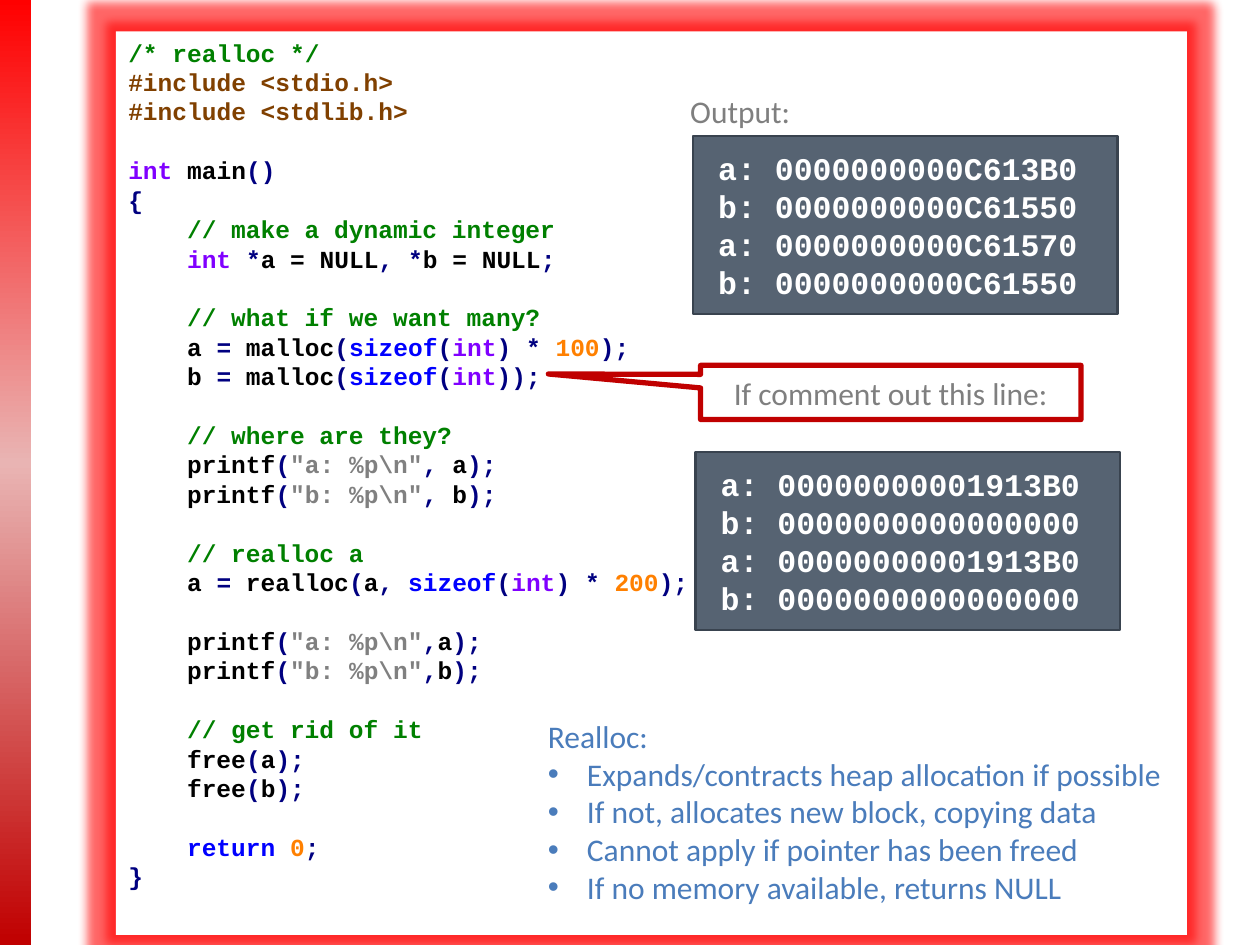
from copy import deepcopy
from itertools import groupby

from lxml import etree
from pptx import Presentation
from pptx.dml.color import RGBColor
from pptx.enum.shapes import MSO_SHAPE
from pptx.enum.text import MSO_ANCHOR, PP_ALIGN
from pptx.oxml.ns import qn
from pptx.util import Inches, Pt

RECT = MSO_SHAPE.RECTANGLE
CALLOUT = MSO_SHAPE.RECTANGULAR_CALLOUT
MIDDLE, TOP = MSO_ANCHOR.MIDDLE, MSO_ANCHOR.TOP
LEFT, CENTER = PP_ALIGN.LEFT, PP_ALIGN.CENTER

SANS, MONO = "Calibri", "Courier New"
COLORS = {
    "white": "FFFFFF", "gray": "7F7F7F", "blue": "4A7CBB", "red": "C00000",
    "slate": "4D5B6B", "edge": "39434F", "glow": "FF0000",
    "note": "008000", "macro": "804000", "type": "8000FF", "plain": "000000",
    "sign": "000080", "word": "0000FF", "digit": "FF8000", "quote": "808080",
}
BAR = [(0, "FF0000"), (0.49, "E9B4B3"), (1, "C00000")]

CODE = r"""/* realloc */
#include <stdio.h>
#include <stdlib.h>

int main()
{
    // make a dynamic integer
    int *a = NULL, *b = NULL;

    // what if we want many?
    a = malloc(sizeof(int) * 100);
    b = malloc(sizeof(int));

    // where are they?
    printf("a: %p\n", a);
    printf("b: %p\n", b);

    // realloc a
    a = realloc(a, sizeof(int) * 200);

    printf("a: %p\n",a);
    printf("b: %p\n",b);

    // get rid of it
    free(a);
    free(b);

    return 0;
}"""

OUTPUTS = [
    (5.5, 1.08, ["a: 0000000000C613B0", "b: 0000000000C61550",
                 "a: 0000000000C61570", "b: 0000000000C61550"]),
    (5.52, 3.59, ["a: 00000000001913B0", "b: 0000000000000000",
                  "a: 00000000001913B0", "b: 0000000000000000"]),
]
POINTS = [
    "Expands/contracts heap allocation if possible",
    "If not, allocates new block, copying data",
    "Cannot apply if pointer has been freed",
    "If no memory available, returns NULL",
]


def rgb(name):
    return RGBColor.from_string(COLORS.get(name, name))


def add_box(slide, kind, place, fill, line=None, width=0):
    box = slide.shapes.add_shape(kind, *map(Inches, place))
    box.shadow.inherit = False
    box.fill.solid()
    box.fill.fore_color.rgb = rgb(fill)
    if line:
        box.line.color.rgb = rgb(line)
        box.line.width = Pt(width)
    else:
        box.line.fill.background()
    return box


def set_alpha(color, percent):
    etree.SubElement(color, qn("a:alpha"), val=str(percent * 1000))


def set_frame(shape, pads=(0.1, 0.05, 0.1, 0.05), anchor=TOP, wrap=True):
    frame = shape.text_frame
    frame.word_wrap = wrap
    frame.vertical_anchor = anchor
    frame.margin_left, frame.margin_top, frame.margin_right, frame.margin_bottom = map(Inches, pads)
    return frame


def write(frame, text, font=SANS, size=18, color="gray", bold=False,
          align=LEFT, pitch=None, before=0, indent=0, bullet=False):
    """Add one paragraph; text is a string or a list of (text, colour) runs."""
    first = frame.paragraphs[0]
    par = frame.add_paragraph() if first.runs else first
    par.alignment = align
    par.space_before = Pt(before)
    if pitch:
        par.line_spacing = Pt(pitch)
    props = par._p.get_or_add_pPr()
    if indent:
        props.set("marL", str(Inches(indent)))
    if bullet:
        props.set("indent", str(-Inches(indent)))
        etree.SubElement(props, qn("a:buFont"), typeface="Arial")
        etree.SubElement(props, qn("a:buChar"), char="•")
    for part, tint in [(text, color)] if isinstance(text, str) else text:
        run = par.add_run()
        run.text = part
        run.font.name, run.font.size, run.font.bold = font, Pt(size), bold
        run.font.color.rgb = rgb(tint)


def paint(line):
    """Split a line of C into (text, colour) runs."""
    if line.startswith(("//", "/*")):
        return [(line, "note")]
    if line.startswith("#"):
        return [(line, "macro")]
    signs = "=" if line.startswith("int") else ""

    def kind(char):
        return "name" if char.isalnum() else "plain" if char in " " + signs else "sign"

    runs = []
    for i, chunk in enumerate(line.split('"')):
        if i % 2:
            runs.append((f'"{chunk}"', "quote"))
            continue
        for group, chars in groupby(chunk, kind):
            part = "".join(chars)
            if group == "name":
                group = ("type" if part == "int" else
                         "word" if part in ("sizeof", "return") else
                         "digit" if part.isdigit() else "plain")
            runs.append((part, group))
    return runs


def add_bar(slide):
    bar = add_box(slide, RECT, (0, 0, 0.25, 7.5), "red")
    bar.fill.gradient()
    bar.fill.gradient_angle = 270
    stops = bar._element.spPr.find(".//" + qn("a:gsLst"))
    stops.append(deepcopy(stops[-1]))
    for stop, (place, color) in zip(bar.fill.gradient_stops, BAR):
        stop.position = place
        stop.color.rgb = rgb(color)


def add_code(slide):
    box = add_box(slide, RECT, (0.92, 0.25, 8.5, 7.17), "white")
    effects = box._element.spPr.find(qn("a:effectLst"))
    glow = etree.SubElement(effects, qn("a:glow"), rad=str(Pt(11)))
    set_alpha(etree.SubElement(glow, qn("a:srgbClr"), val=COLORS["glow"]), 60)
    frame = set_frame(box)
    size, pitch, gap = 14, 16.8, 0
    for line in CODE.splitlines():
        if not line:
            gap = pitch
            continue
        body = line.lstrip()
        indent = (len(line) - len(body)) * size * 0.6 / 72
        write(frame, paint(body), font=MONO, size=size, bold=True,
              pitch=pitch, before=gap, indent=indent)
        gap = 0


def add_output(slide, left, top, lines):
    box = add_box(slide, RECT, (left, top, 3.37, 1.41), "slate", "edge", 1.25)
    set_alpha(box._element.spPr.find(qn("a:solidFill"))[0], 95)
    frame = set_frame(box, (0.2, 0.1, 0.3, 0.1), wrap=False)
    for line in lines:
        write(frame, line, font=MONO, color="white", bold=True, pitch=21.7)


def main():
    deck = Presentation()
    deck.slide_width, deck.slide_height = Inches(10), Inches(7.5)
    slide = deck.slides.add_slide(deck.slide_layouts[6])
    add_bar(slide)
    add_code(slide)

    call = add_box(slide, CALLOUT, (5.56, 2.9, 3.02, 0.43), "white", "red", 3)
    call.adjustments[0], call.adjustments[1] = -0.9, -0.34
    write(set_frame(call, anchor=MIDDLE), "If comment out this line:", align=CENTER)

    for output in OUTPUTS:
        add_output(slide, *output)

    label = slide.shapes.add_textbox(*map(Inches, (5.38, 0.68, 1, 0.4)))
    write(set_frame(label, wrap=False), "Output:")

    notes = slide.shapes.add_textbox(*map(Inches, (4.25, 5.64, 5.08, 1.62)))
    frame = set_frame(notes)
    write(frame, "Realloc:", color="blue")
    for point in POINTS:
        write(frame, point, color="blue", indent=0.31, bullet=True)
    deck.save("out.pptx")


if __name__ == "__main__":
    main()
